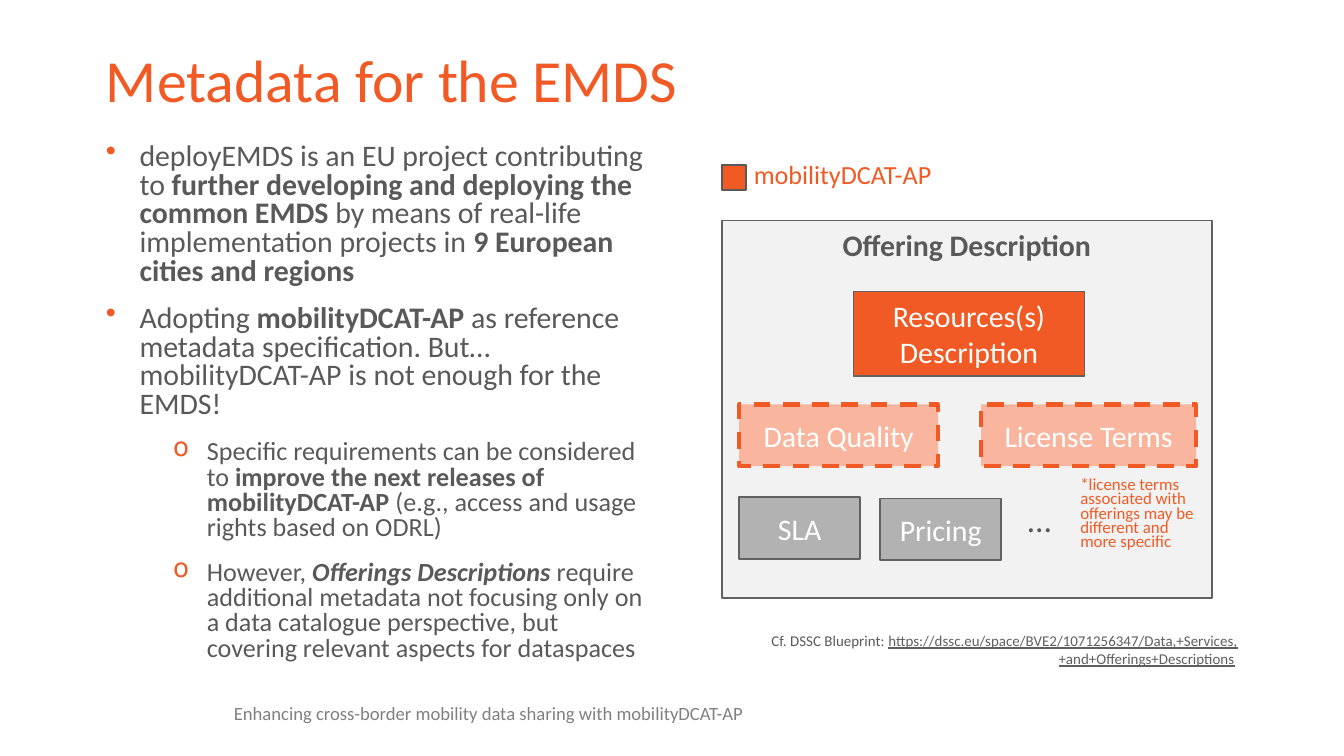
from lxml.etree import SubElement
from pptx import Presentation
from pptx.dml.color import RGBColor
from pptx.enum.dml import MSO_LINE
from pptx.enum.shapes import MSO_SHAPE
from pptx.enum.text import MSO_ANCHOR, PP_ALIGN
from pptx.oxml.ns import qn
from pptx.util import Pt

ORANGE = RGBColor(0xF1, 0x5A, 0x24)
PEACH = RGBColor(0xF9, 0xB5, 0x9D)
WHITE = RGBColor(0xFF, 0xFF, 0xFF)
PANEL = RGBColor(0xF2, 0xF2, 0xF2)
SILVER = RGBColor(0xB2, 0xB2, 0xB2)
BORDER = RGBColor(0x61, 0x61, 0x61)
BODY = RGBColor(0x59, 0x59, 0x59)
LINK = RGBColor(0x5F, 0x5F, 0x5F)
FOOTER = RGBColor(0x80, 0x80, 0x80)


class SlideBuilder:
    font_name = "Calibri"

    def __init__(self, slide):
        self.slide = slide

    def style(self, run, size, color, bold=False, italic=False, underline=False):
        font = run.font
        font.name = self.font_name
        font.size = Pt(size)
        font.color.rgb = color
        font.bold = bold
        font.italic = italic
        font.underline = underline

    def fill_text(self, frame, text, size, color, align, spacing=1.0, bold=False):
        frame.text = text
        for paragraph in frame.paragraphs:
            paragraph.alignment = align
            paragraph.line_spacing = spacing
            for run in paragraph.runs:
                self.style(run, size, color, bold)

    def box(self, left, top, width, height, fill, text="", color=WHITE,
            border=BORDER, dashed=False, anchor=MSO_ANCHOR.MIDDLE, bold=False):
        rect = self.slide.shapes.add_shape(
            MSO_SHAPE.RECTANGLE, Pt(left), Pt(top), Pt(width), Pt(height))
        rect.shadow.inherit = False
        rect.fill.solid()
        rect.fill.fore_color.rgb = fill
        rect.line.color.rgb = border
        rect.line.width = Pt(2.25 if dashed else 1)
        if dashed:
            rect.line.dash_style = MSO_LINE.DASH
        rect.text_frame.vertical_anchor = anchor
        if text:
            self.fill_text(rect.text_frame, text, 16, color, PP_ALIGN.CENTER, bold=bold)

    def frame(self, left, top, width, height, anchor=MSO_ANCHOR.TOP):
        frame = self.slide.shapes.add_textbox(
            Pt(left), Pt(top), Pt(width), Pt(height)).text_frame
        frame.word_wrap = True
        frame.vertical_anchor = anchor
        return frame

    def label(self, left, top, width, height, text, size, color,
              align=PP_ALIGN.LEFT, spacing=1.0, anchor=MSO_ANCHOR.TOP, inset=True):
        frame = self.frame(left, top, width, height, anchor)
        if not inset:
            frame.margin_left = frame.margin_right = Pt(0)
            frame.margin_top = frame.margin_bottom = Pt(0)
        self.fill_text(frame, text, size, color, align, spacing)

    def bullets(self, left, top, width, height, items):
        frame = self.frame(left, top, width, height)
        for index, (level, after, parts) in enumerate(items):
            paragraph = frame.add_paragraph() if index else frame.paragraphs[0]
            properties = paragraph._p.get_or_add_pPr()
            properties.set("marL", str(Pt(54 if level else 18)))
            properties.set("indent", str(-Pt(18)))
            bullet_color = SubElement(properties, qn("a:buClr"))
            SubElement(bullet_color, qn("a:srgbClr"), val=str(ORANGE))
            SubElement(properties, qn("a:buChar"), char="o" if level else "•")
            paragraph.level = level
            paragraph.line_spacing = 0.8
            paragraph.space_before = Pt((5 if level else 10) if index else 0)
            paragraph.space_after = Pt(after)
            for text, emphasis in parts:
                run = paragraph.add_run()
                run.text = text
                self.style(run, 14 if level else 16, BODY,
                           "b" in emphasis, "i" in emphasis)

    def citation(self, left, top, width, height, lead, address):
        paragraph = self.frame(left, top, width, height).paragraphs[0]
        paragraph.alignment = PP_ALIGN.RIGHT
        for text, color, underline in ((lead, BODY, False), (address, LINK, True),
                                       (" ", BODY, False)):
            run = paragraph.add_run()
            run.text = text
            self.style(run, 8, color, underline=underline)


def main():
    deck = Presentation()
    deck.slide_width, deck.slide_height = Pt(720), Pt(405)
    page = SlideBuilder(deck.slides.add_slide(deck.slide_layouts[6]))

    page.box(386.6, 118.1, 262.8, 202.3, PANEL, "Offering Description", BODY,
             anchor=MSO_ANCHOR.TOP, bold=True)
    page.label(49.7, 21.6, 620.6, 45.4, "Metadata for the EMDS", 32, ORANGE,
               spacing=0.9, anchor=MSO_ANCHOR.MIDDLE)
    page.label(125.3, 375.1, 282.2, 13,
               "Enhancing cross-border mobility data sharing with mobilityDCAT-AP",
               10, FOOTER, spacing=0.9, anchor=MSO_ANCHOR.BOTTOM, inset=False)

    page.bullets(49.7, 73.4, 306, 290.9, [
        (0, 0, [("deployEMDS is an EU project contributing to ", ""),
                ("further developing and deploying the common EMDS ", "b"),
                ("by means of real-life implementation projects in ", ""),
                ("9 European cities and regions", "b")]),
        (0, 6, [("Adopting ", ""), ("mobilityDCAT-AP", "b"),
                (" as reference metadata specification. But… mobilityDCAT-AP "
                 "is not enough for the EMDS!", "")]),
        (1, 6, [("Specific requirements can be considered to ", ""),
                ("improve the next releases of mobilityDCAT-AP", "b"),
                (" (e.g., access and usage rights based on ODRL)", "")]),
        (1, 6, [("However, ", ""), ("Offerings Descriptions", "bi"),
                (" require additional metadata not focusing only on a data catalogue "
                 "perspective, but covering relevant aspects for dataspaces", "")]),
    ])

    page.citation(330.5, 334.8, 339.8, 26.6, "Cf. DSSC Blueprint: ",
                  "https://dssc.eu/space/BVE2/1071256347/"
                  "Data,+Services,+and+Offerings+Descriptions")

    page.box(457.2, 156.2, 123.8, 45.4, ORANGE, "Resources(s)\nDescription")
    for left, width, topic in ((396, 106.6, "Data Quality"),
                               (525.6, 115.2, "License Terms")):
        page.box(left, 216.7, width, 33.1, PEACH, topic, border=ORANGE, dashed=True)
    for left, top, topic in ((396, 266.4, "SLA"), (471.6, 267.1, "Pricing")):
        page.box(left, top, 64.8, 33.1, SILVER, topic)

    page.box(386.6, 88.6, 13, 13, ORANGE, border=BODY)
    page.label(396.7, 81.4, 150.5, 24.5, "mobilityDCAT-AP", 14, ORANGE)
    page.label(571.7, 253.4, 77, 46.1,
               "*license terms associated with offerings may be different and more specific",
               9, ORANGE, spacing=0.7)
    page.label(543.6, 263.5, 20.9, 28.8, "…", 18, BODY, PP_ALIGN.CENTER)

    deck.save("out.pptx")


if __name__ == "__main__":
    main()
